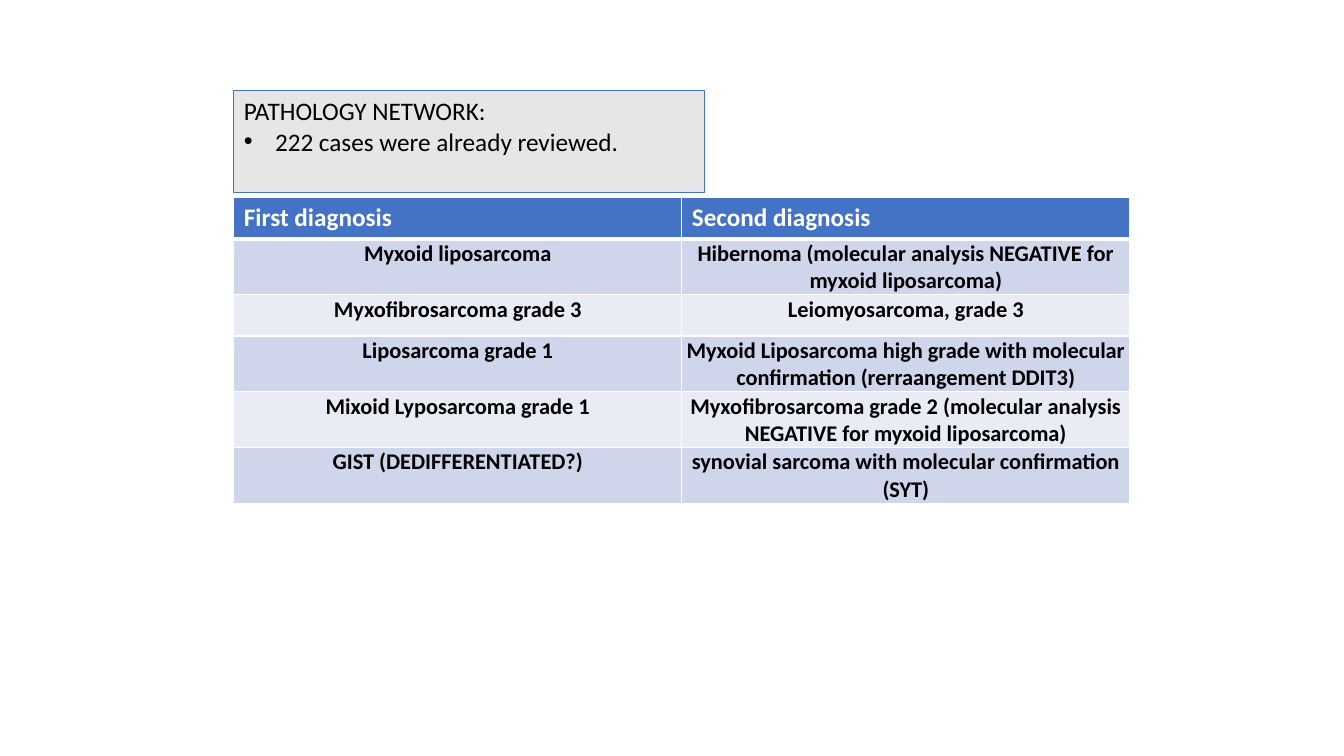
import dataclasses

import lxml.etree
import pptx
import pptx.dml.color
import pptx.enum.shapes
import pptx.enum.text
import pptx.oxml.ns
import pptx.util


@dataclasses.dataclass
class Theme:
    font: str = "Calibri"
    head: str = "4472C4"
    bands: tuple = ("CFD5EA", "E9EBF5")
    panel: str = "E7E6E6"
    ink: str = "000000"
    white: str = "FFFFFF"
    large: int = 18
    small: int = 16


class Deck:
    """Draws styled elements, with lengths in percent of the slide."""

    def __init__(self, theme):
        self.theme = theme
        self.show = pptx.Presentation()
        self.show.slide_width = pptx.util.Inches(13.33)
        self.show.slide_height = pptx.util.Inches(7.5)
        self.slide = self.show.slides.add_slide(self.show.slide_layouts[6])

    def across(self, share):
        return round(self.show.slide_width * share / 100)

    def down(self, share):
        return round(self.show.slide_height * share / 100)

    def paint(self, fill, color):
        fill.solid()
        fill.fore_color.rgb = pptx.dml.color.RGBColor.from_string(color)

    def label(self, para, text, size, color, bold=False, center=False):
        align = pptx.enum.text.PP_ALIGN
        para.alignment = align.CENTER if center else align.LEFT
        run = para.add_run()
        run.text = text
        run.font.name = self.theme.font
        run.font.size = pptx.util.Pt(size)
        run.font.bold = bold
        self.paint(run.font.fill, color)

    def bullet(self, para):
        props = para._p.get_or_add_pPr()
        indent = pptx.util.Inches(0.31)
        props.set("marL", str(indent))
        props.set("indent", str(-indent))
        name = pptx.oxml.ns.qn
        lxml.etree.SubElement(props, name("a:buFont"), typeface="Arial")
        lxml.etree.SubElement(props, name("a:buChar"), char="•")

    def panel(self, x, y, w, h, title, points):
        look = self.theme
        box = self.slide.shapes.add_shape(
            pptx.enum.shapes.MSO_SHAPE.RECTANGLE,
            self.across(x), self.down(y), self.across(w), self.down(h))
        box.shadow.inherit = False
        self.paint(box.fill, look.panel)
        self.paint(box.line.fill, look.head)
        box.line.width = pptx.util.Pt(0.75)
        frame = box.text_frame
        frame.word_wrap = True
        frame.vertical_anchor = pptx.enum.text.MSO_ANCHOR.TOP
        self.label(frame.paragraphs[0], title, look.large, look.ink)
        for point in points:
            para = frame.add_paragraph()
            self.label(para, point, look.large, look.ink)
            self.bullet(para)

    def border(self, cell, top, low):
        props = cell._tc.get_or_add_tcPr()
        name = pptx.oxml.ns.qn
        sides = {"L": 1, "R": 1, "T": top, "B": low}
        for spot, (side, width) in enumerate(sides.items()):
            line = lxml.etree.Element(
                name("a:ln" + side), w=str(pptx.util.Pt(width)))
            fill = lxml.etree.SubElement(line, name("a:solidFill"))
            lxml.etree.SubElement(
                fill, name("a:srgbClr"), val=self.theme.white)
            props.insert(spot, line)

    def table(self, x, y, w, step, rows):
        look = self.theme
        grid = self.slide.shapes.add_table(
            len(rows), len(rows[0]), self.across(x), self.down(y),
            self.across(w), self.down(step * len(rows))).table
        for r, row in enumerate(rows):
            for c, text in enumerate(row):
                cell = grid.cell(r, c)
                para = cell.text_frame.paragraphs[0]
                if r == 0:
                    self.paint(cell.fill, look.head)
                    self.label(para, text, look.large, look.white, True)
                else:
                    self.paint(cell.fill, look.bands[(r - 1) % 2])
                    self.label(para, text, look.small, look.ink, True, True)
                    edge = pptx.util.Inches(0.01)
                    cell.margin_left = cell.margin_right = edge
                    cell.margin_top = edge
                    cell.margin_bottom = 0
                self.border(cell, 3 if r == 1 else 1, 3 if r == 0 else 1)


def main():
    deck = Deck(Theme())
    left = 17.4
    deck.table(left, 26.13, 66.67, 5.47, [
        ("First diagnosis", "Second diagnosis"),
        ("Myxoid liposarcoma",
         "Hibernoma (molecular analysis NEGATIVE for myxoid liposarcoma)"),
        ("Myxofibrosarcoma grade 3", "Leiomyosarcoma, grade 3"),
        ("Liposarcoma grade 1",
         "Myxoid Liposarcoma high grade with molecular confirmation "
         "(rerraangement DDIT3)"),
        ("Mixoid Lyposarcoma grade 1",
         "Myxofibrosarcoma grade 2 (molecular analysis NEGATIVE for "
         "myxoid liposarcoma)"),
        ("GIST (DEDIFFERENTIATED?)",
         "synovial sarcoma with molecular confirmation (SYT)"),
    ])
    deck.panel(left, 12, 35.03, 13.47, "PATHOLOGY NETWORK:",
               ["222 cases were already reviewed."])
    deck.show.save("out.pptx")


if __name__ == "__main__":
    main()
